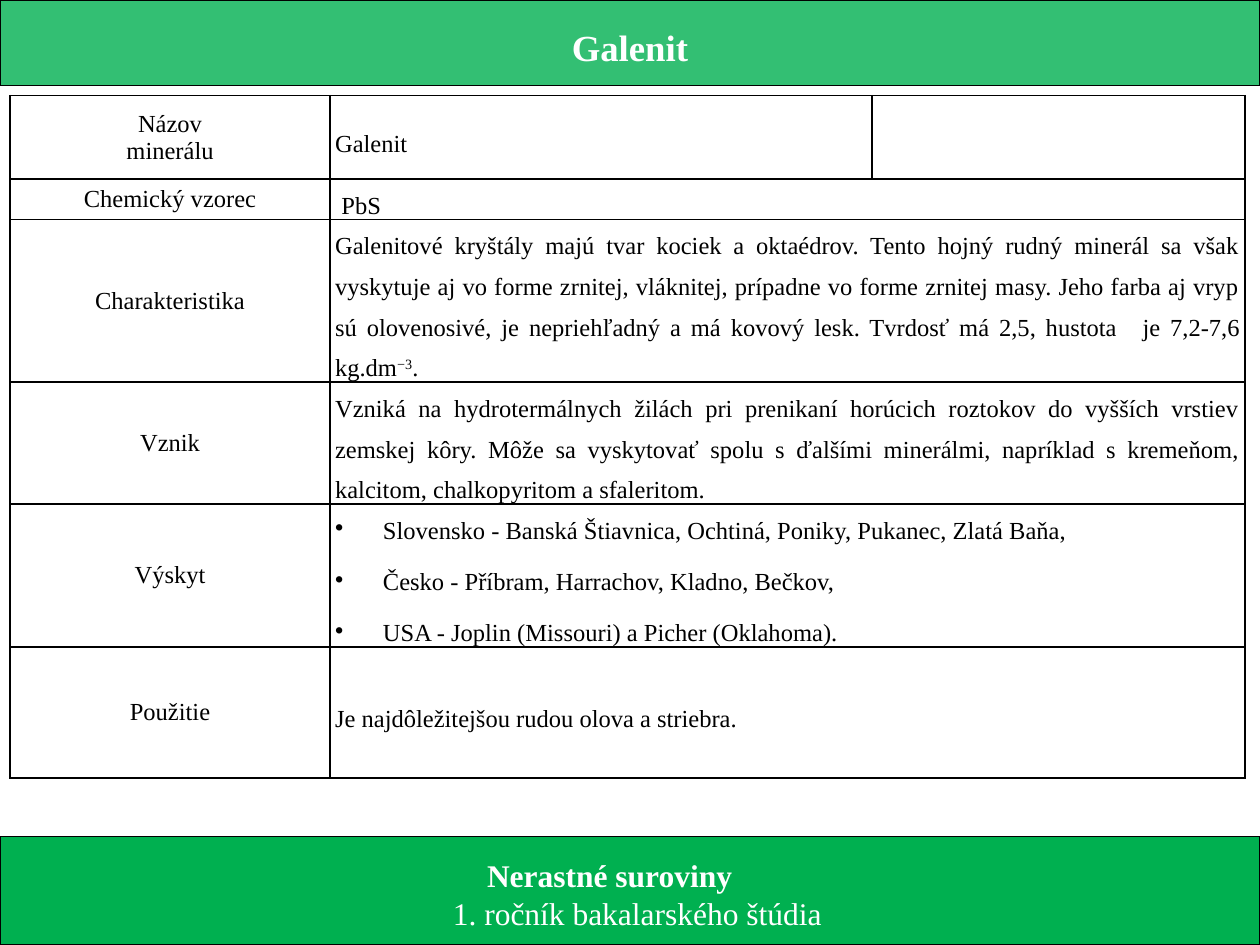
import pptx
import pptx.dml.color
import pptx.enum.text
import pptx.oxml
import pptx.oxml.ns
import pptx.util

ALIGN = pptx.enum.text.PP_ALIGN
MIDDLE = pptx.enum.text.MSO_ANCHOR.MIDDLE
TOP = pptx.enum.text.MSO_ANCHOR.TOP
WIDTH, HEIGHT = 10, 7.5
COLUMNS = [2.54, 4.3, 2.96]
ROWS = [0.66, 0.28, 1.23, 0.91, 1.07, 1.04]
GREEN, BLACK, WHITE = "00B050", "000000", "FFFFFF"
LABELS = [["Názov", "minerálu"], ["Chemický vzorec"], ["Charakteristika"],
          ["Vznik"], ["Výskyt"], ["Použitie"]]
CHARACTER = (
    "Galenitové kryštály majú tvar kociek a oktaédrov. Tento hojný rudný "
    "minerál sa však vyskytuje aj vo forme zrnitej, vláknitej, prípadne vo "
    "forme zrnitej masy. Jeho farba aj vryp sú olovenosivé, je nepriehľadný "
    "a má kovový lesk. Tvrdosť má 2,5, hustota\t je 7,2-7,6 kg.dm")
ORIGIN = (
    "Vzniká na hydrotermálnych žilách pri prenikaní horúcich roztokov do "
    "vyšších vrstiev zemskej kôry. Môže sa vyskytovať spolu s ďalšími "
    "minerálmi, napríklad s kremeňom, kalcitom, chalkopyritom a sfaleritom.")
LOCALITIES = ["Slovensko - Banská Štiavnica, Ochtiná, Poniky, Pukanec, Zlatá Baňa,",
              "Česko - Příbram, Harrachov, Kladno, Bečkov,",
              "USA - Joplin (Missouri) a Picher (Oklahoma)."]
USE = "Je najdôležitejšou rudou olova a striebra."


def inches(value):
    """Return a length in inches."""
    return pptx.util.Inches(value)


def rgb(code):
    """Return the colour of a hex string."""
    return pptx.dml.color.RGBColor.from_string(code)


def add_xml(parent, markup):
    """Append a drawing element given as markup."""
    namespace = pptx.oxml.ns.nsdecls("a")
    element = pptx.oxml.parse_xml(markup.replace(" ", f" {namespace} ", 1))
    parent.append(element)


def put_text(frame, text, size=14, color=BLACK, bold=False, align=ALIGN.CENTER,
             spacing=None, after=0, indent=0, bullet=False, raised=0, joined=False):
    """Write a paragraph, or continue the last one when joined."""
    paragraph = frame.paragraphs[-1]
    if paragraph.runs and not joined:
        paragraph = frame.add_paragraph()
    if not joined:
        paragraph.alignment = align
        paragraph.line_spacing = spacing
        paragraph.space_before = pptx.util.Pt(0)
        paragraph.space_after = pptx.util.Pt(after)
        properties = paragraph._p.get_or_add_pPr()
        properties.set("marL", str(inches(indent)))
        properties.set("indent", str(inches(-indent if bullet else 0)))
        if bullet:
            add_xml(properties, '<a:buChar char="•"/>')
    run = paragraph.add_run()
    run.text = text
    run.font.name = "Times New Roman"
    run.font.size = pptx.util.Pt(size)
    run.font.bold = bold
    run.font.color.rgb = rgb(color)
    if raised:
        run.font._element.set("baseline", str(raised * 1000))


def format_band(band, top, height):
    """Place a full-width green band with a thin black outline."""
    band.left, band.top = 0, inches(top)
    band.width, band.height = inches(WIDTH), inches(height)
    band.fill.solid()
    band.fill.fore_color.rgb = rgb(GREEN)
    band.line.color.rgb = rgb(BLACK)
    band.line.width = pptx.util.Pt(0.75)
    band.text_frame.word_wrap = True
    band.text_frame.vertical_anchor = MIDDLE


def add_heading(slide):
    """Turn the title placeholder into the translucent top band."""
    heading = slide.shapes.title
    format_band(heading, 0, 0.68)
    fill_color = heading._element.spPr.find(
        pptx.oxml.ns.qn("a:solidFill")).find(pptx.oxml.ns.qn("a:srgbClr"))
    add_xml(fill_color, '<a:alpha val="80000"/>')
    frame = heading.text_frame
    frame.auto_size = pptx.enum.text.MSO_AUTO_SIZE.NONE
    frame.margin_top, frame.margin_bottom = inches(0.1), inches(0.03)
    put_text(frame, "Galenit", size=21, color=WHITE, bold=True)


def add_footer(slide):
    """Add the bottom band with the course and the year of study."""
    footer = slide.shapes.add_shape(
        pptx.enum.shapes.MSO_SHAPE.RECTANGLE, 0, 0, inches(1), inches(1))
    footer.shadow.inherit = False
    format_band(footer, 6.64, 0.86)
    frame = footer.text_frame
    frame.margin_right = inches(0.42)
    frame.margin_top, frame.margin_bottom = inches(0.08), inches(0.03)
    put_text(frame, "Nerastné suroviny", size=18, color=WHITE, bold=True)
    put_text(frame, "1. ročník bakalarského štúdia", size=18, color=WHITE, indent=0.44)


def format_cell(cell):
    """Give a table cell its margins, black borders and no fill."""
    cell.margin_left = cell.margin_right = inches(0.04)
    cell.margin_top = cell.margin_bottom = 0
    cell.vertical_anchor = MIDDLE
    properties = cell._tc.get_or_add_tcPr()
    for side in ("lnL", "lnR", "lnT", "lnB"):
        add_xml(properties, f'<a:{side} w="12700"><a:solidFill><a:srgbClr val="{BLACK}"/>'
                            f'</a:solidFill></a:{side}>')
    cell.fill.background()


def add_mineral_table(slide):
    """Add the table that describes the mineral."""
    table = slide.shapes.add_table(
        len(ROWS), len(COLUMNS), inches(0.08), inches(0.76),
        inches(sum(COLUMNS)), inches(sum(ROWS))).table
    table.first_row = table.horz_banding = False
    for column, width in zip(table.columns, COLUMNS):
        column.width = inches(width)
    for row, height in zip(table.rows, ROWS):
        row.height = inches(height)
        for cell in row.cells:
            format_cell(cell)
    for index, lines in enumerate(LABELS):
        if index:
            table.cell(index, 1).merge(table.cell(index, 2))
        for line in lines:
            put_text(table.cell(index, 0).text_frame, line)

    name, formula, character, origin, occurrence, use = [
        table.cell(index, 1).text_frame for index in range(len(ROWS))]
    body = {"spacing": 1.5, "after": 6, "align": ALIGN.JUSTIFY}
    put_text(name, "Galenit", **{**body, "align": ALIGN.LEFT})
    put_text(formula, "PbS", indent=0.05, **{**body, "align": ALIGN.LEFT})
    put_text(character, CHARACTER, **body)
    put_text(character, "−3", raised=30, joined=True)
    put_text(character, ".", joined=True)
    put_text(origin, ORIGIN, **body)
    table.cell(4, 1).vertical_anchor = TOP
    for locality in LOCALITIES:
        put_text(occurrence, locality, indent=0.38, bullet=True, **body)
    put_text(use, USE, **body)


def main():
    """Build the mineral slide and save it."""
    deck = pptx.Presentation()
    deck.slide_width, deck.slide_height = inches(WIDTH), inches(HEIGHT)
    slide = deck.slides.add_slide(deck.slide_layouts.get_by_name("Title Only"))
    add_heading(slide)
    add_footer(slide)
    add_mineral_table(slide)
    deck.save("out.pptx")


if __name__ == "__main__":
    main()
